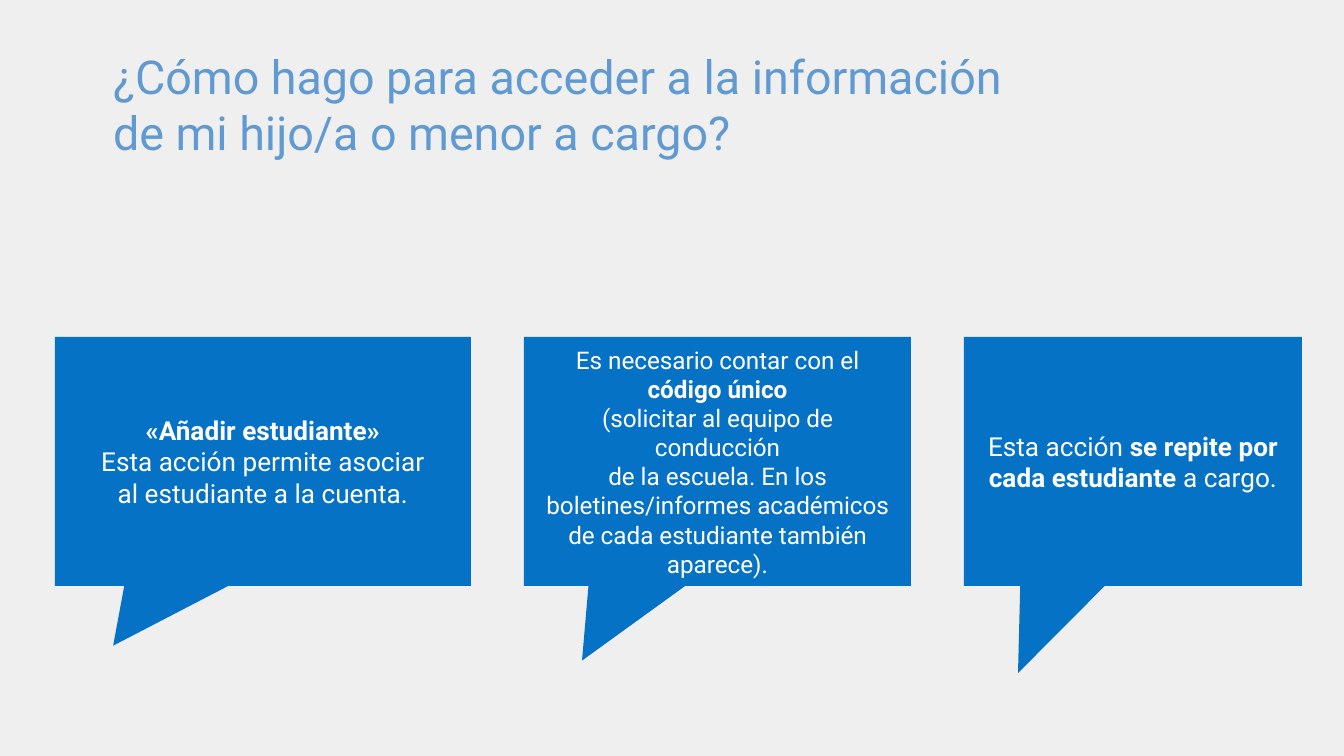
from typing import NamedTuple

from pptx import Presentation
from pptx import util as u
from pptx.dml.color import RGBColor
from pptx.enum import shapes, text

EMU_PER_PX = 914400 / 134.4
FONT = "Roboto"
BACKGROUND, BLUE, TITLE_BLUE, WHITE = "EFEFEF", "0672C6", "619AD0", "FFFFFF"
CALLOUT_TOP, CALLOUT_HEIGHT, CALLOUT_INSET = 337, 249, 13


class Span(NamedTuple):
    words: str
    bold: bool = False


class Callout(NamedTuple):
    left: int
    width: int
    tip: tuple[float, float]  # offset from the centre, as shares of width and height
    size: int
    paragraphs: list[list[Span]]


CALLOUTS = [
    Callout(55, 416, (-0.36, 0.74), 14, [
        [Span("«Añadir estudiante»", bold=True)],
        [Span("Esta acción permite asociar")],
        [Span("al estudiante a la cuenta.")],
    ]),
    Callout(524, 387, (-0.35, 0.8), 13, [
        [Span("Es necesario contar con el "), Span("código único", bold=True)],
        [Span("(solicitar al equipo de conducción")],
        [Span("de la escuela. En los boletines/informes académicos "
              "de cada estudiante también aparece).")],
    ]),
    Callout(964, 338, (-0.34, 0.85), 14, [
        [Span("Esta acción "), Span("se repite por cada estudiante", bold=True),
         Span(" a cargo.")],
    ]),
]


def px(length: int) -> int:
    return round(length * EMU_PER_PX)


def color(code: str) -> RGBColor:
    return RGBColor.from_string(code)


def write(shape, paragraphs: list[list[Span]], *, size: int, ink: str,
          align=text.PP_ALIGN.LEFT, inset: int = 0) -> None:
    """Fill a shape with vertically centred, wrapped paragraphs."""
    frame = shape.text_frame
    frame.word_wrap = True
    frame.vertical_anchor = text.MSO_ANCHOR.MIDDLE
    frame.margin_left = frame.margin_right = px(inset)
    frame.margin_top = frame.margin_bottom = px(inset)
    for index, spans in enumerate(paragraphs):
        para = frame.add_paragraph() if index else frame.paragraphs[0]
        para.alignment = align
        for span in spans:
            run = para.add_run()
            run.text = span.words
            run.font.name = FONT
            run.font.size = u.Pt(size)
            run.font.bold = span.bold
            run.font.color.rgb = color(ink)


def draw_callout(page, callout: Callout) -> None:
    box = page.shapes.add_shape(
        shapes.MSO_SHAPE.ROUNDED_RECTANGULAR_CALLOUT,
        px(callout.left), px(CALLOUT_TOP), px(callout.width), px(CALLOUT_HEIGHT))
    for index, value in enumerate((*callout.tip, 0)):  # the last one squares the corners
        box.adjustments[index] = value
    box.shadow.inherit = False
    box.fill.solid()
    box.fill.fore_color.rgb = color(BLUE)
    box.line.fill.background()
    write(box, callout.paragraphs, size=callout.size, ink=WHITE,
          align=text.PP_ALIGN.CENTER, inset=CALLOUT_INSET)


def main() -> None:
    deck = Presentation()
    deck.slide_width, deck.slide_height = px(1344), px(756)
    page = deck.slides.add_slide(deck.slide_layouts[6])
    page.background.fill.solid()
    page.background.fill.fore_color.rgb = color(BACKGROUND)

    for callout in CALLOUTS:
        draw_callout(page, callout)

    title = page.shapes.add_textbox(px(113), px(55), px(898), px(97))
    question = "¿Cómo hago para acceder a la información de mi hijo/a o menor a cargo?"
    write(title, [[Span(question)]], size=25, ink=TITLE_BLUE)

    deck.save("out.pptx")


if __name__ == "__main__":
    main()
